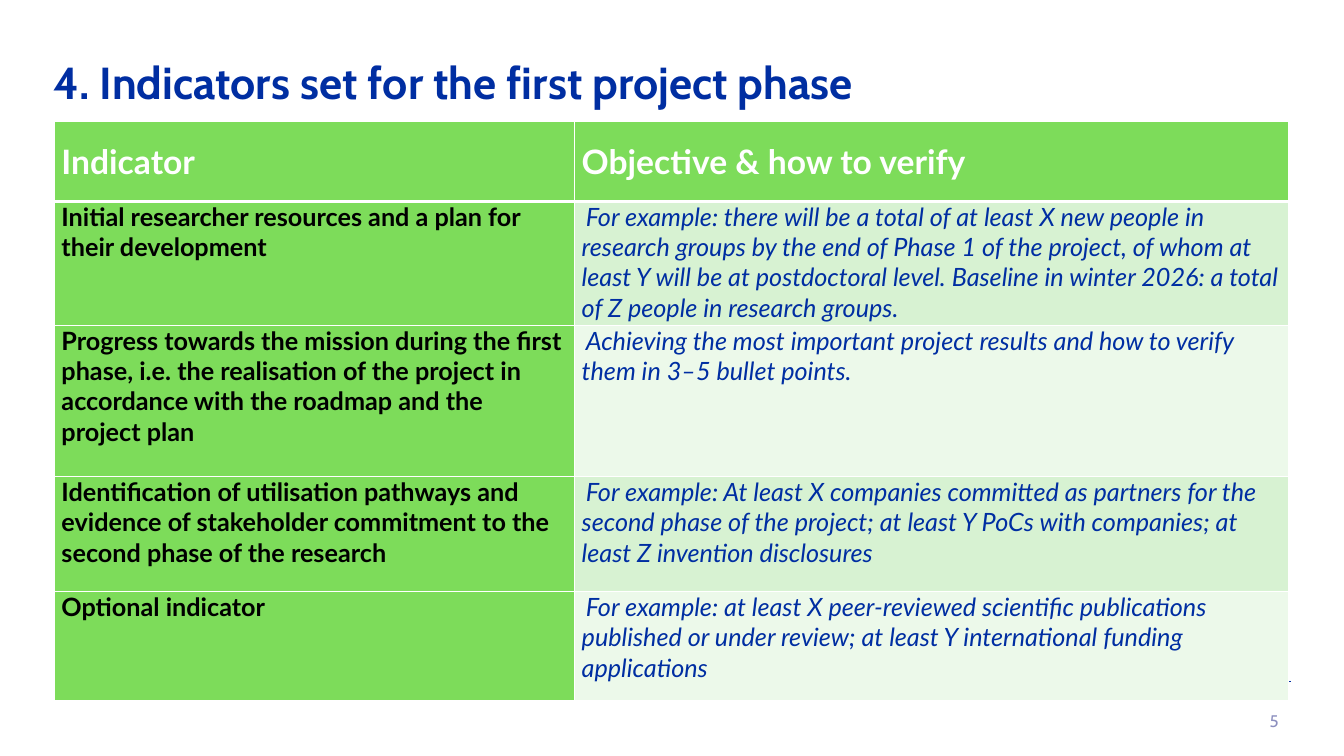
from dataclasses import dataclass

import pptx
import pptx.dml.color
import pptx.enum.text
import pptx.oxml
import pptx.oxml.ns
import pptx.util
from lxml import etree

Inches, Pt = pptx.util.Inches, pptx.util.Pt
Align, Anchor = pptx.enum.text.PP_ALIGN, pptx.enum.text.MSO_ANCHOR
NAVY, GREEN, WHITE, BLACK = "002EA2", "7DDC5A", "FFFFFF", "000000"
BANDS = ("D7F2D2", "ECF9EA")

TITLE = {"name": "Cabin", "size": Pt(32), "bold": True}
PAGE = {"name": "Cabin", "size": Pt(12)}
HEAD = {"name": "Lato", "size": Pt(24), "bold": True}
LABEL = {"name": "Lato", "size": Pt(18), "bold": True}
GOAL = {"name": "Lato", "size": Pt(18), "bold": False, "italic": True}


@dataclass
class Row:
    label: str
    goal: str
    height: float


HEADER = Row("Indicator", "Objective & how to verify", 0.8)
ROWS = [
    Row("Initial researcher resources and a plan for their development",
        "For example: there will be a total of at least X new people in research groups "
        "by the end of Phase 1 of the project, of whom at least Y will be at postdoctoral "
        "level. Baseline in winter 2026: a total of Z people in research groups.", 1.23),
    Row("Progress towards the mission during the first phase, i.e. the realisation of "
        "the project in accordance with the roadmap and the project plan",
        "Achieving the most important project results and how to verify them in "
        "3–5 bullet points.", 1.5),
    Row("Identification of utilisation pathways and evidence of stakeholder commitment "
        "to the second phase of the research",
        "For example: At least X companies committed as partners for the second phase of "
        "the project; at least Y PoCs with companies; at least Z invention disclosures",
        1.14),
    Row("Optional indicator",
        "For example: at least X peer-reviewed scientific publications published or under "
        "review; at least Y international funding applications", 1.08),
]


def paint(target: object, color: str) -> None:
    """Colour a font, or a fill or line given as a fill format."""
    if hasattr(target, "solid"):
        target.solid()
        target = target.fore_color
    else:
        target = target.color
    target.rgb = pptx.dml.color.RGBColor.from_string(color)


def write(frame: object, text: str, look: dict, color: str) -> object:
    para = frame.paragraphs[0]
    run = para.add_run()
    run.text = text
    for key, value in look.items():
        setattr(run.font, key, value)
    paint(run.font, color)
    return para


def edge(cell: object, widths: dict[str, float]) -> None:
    """Draw white cell borders, placed ahead of the fill."""
    props = cell._tc.get_or_add_tcPr()
    for spot, (side, width) in enumerate(widths.items()):
        props.insert(spot, pptx.oxml.parse_xml(
            f'<a:ln{side} {pptx.oxml.ns.nsdecls("a")} w="{Pt(width)}"><a:solidFill>'
            f'<a:srgbClr val="{WHITE}"/></a:solidFill></a:ln{side}>'))


def fill_cell(cell: object, text: str, look: dict, color: str, back: str,
              top: float = 1, base: float = 1) -> object:
    cell.margin_left = cell.margin_right = Inches(0.07)
    cell.margin_top = cell.margin_bottom = 0
    paint(cell.fill, back)
    edge(cell, {"L": 1, "R": 1, "T": top, "B": base})
    return write(cell.text_frame, text, look, color)


def add_rule(slide: object) -> None:
    rule = slide.shapes.add_connector(1, Inches(0.55), Inches(6.76),
                                      Inches(12.8), Inches(6.76))
    rule.line.width = Pt(0.85)
    paint(rule.line.fill, NAVY)
    etree.SubElement(rule._element.spPr, pptx.oxml.ns.qn("a:effectLst"))


def add_title(slide: object) -> None:
    title = slide.shapes.title
    title.left, title.top = Inches(0.43), Inches(0.12)
    title.width, title.height = Inches(12.25), Inches(1.45)
    title.text_frame.vertical_anchor = Anchor.MIDDLE
    para = write(title.text_frame, "4. Indicators set for the first project phase",
                 TITLE, NAVY)
    para.alignment = Align.LEFT
    para.line_spacing = 0.9


def add_page(slide: object) -> None:
    box = slide.shapes.add_textbox(Inches(11.04), Inches(6.95), Inches(1.74), Inches(0.4))
    box.text_frame.word_wrap = True
    box.text_frame.vertical_anchor = Anchor.MIDDLE
    write(box.text_frame, "5", PAGE, "8C8FBF").alignment = Align.RIGHT


def add_grid(slide: object) -> None:
    rows = [HEADER, *ROWS]
    grid = slide.shapes.add_table(len(rows), 2, Inches(0.54), Inches(1.2), Inches(12.24),
                                  Inches(sum(row.height for row in rows))).table
    for column, width in zip(grid.columns, (5.16, 7.08)):
        column.width = Inches(width)
    for line, row in zip(grid.rows, rows):
        line.height = Inches(row.height)

    # Header row
    for cell, text in zip(grid.rows[0].cells, (HEADER.label, HEADER.goal)):
        fill_cell(cell, text, HEAD, WHITE, GREEN, base=3)
        cell.vertical_anchor = Anchor.MIDDLE

    # Indicator rows, with banded goals
    for spot, row in enumerate(ROWS):
        left, right = grid.rows[spot + 1].cells
        top = 1 if spot else 3
        fill_cell(left, row.label, LABEL, BLACK, GREEN, top)
        para = fill_cell(right, row.goal, GOAL, NAVY, BANDS[spot % 2], top)
        para._p.get_or_add_pPr().set("indent", str(Inches(0.04)))


def main() -> None:
    deck = pptx.Presentation()
    deck.slide_width, deck.slide_height = Inches(13.33), Inches(7.5)
    slide = deck.slides.add_slide(deck.slide_layouts[5])
    paint(slide.background.fill, WHITE)
    add_rule(slide)
    add_title(slide)
    add_page(slide)
    add_grid(slide)
    deck.save("out.pptx")


if __name__ == "__main__":
    main()
